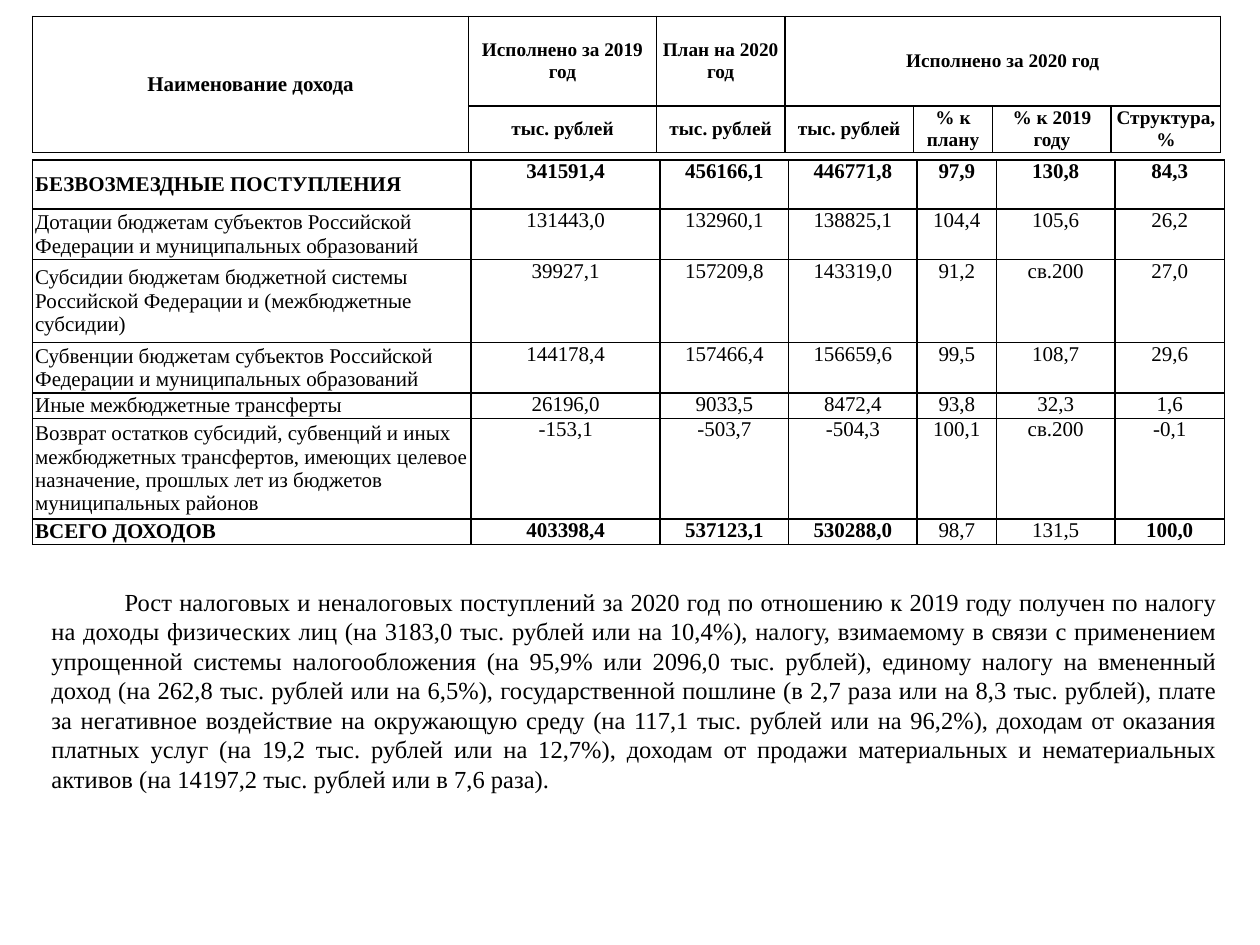
from lxml.etree import SubElement
from pptx import Presentation
from pptx.dml.color import RGBColor
from pptx.enum.text import MSO_ANCHOR as ANCHOR, PP_ALIGN as ALIGN
from pptx.oxml import parse_xml
from pptx.oxml.ns import nsdecls
from pptx.util import Inches, Pt

COLORS = {"text": "000000", "border": "000000"}
FONT = "Times New Roman"

HEADER_WIDTHS = [3.46, 1.49, 1.02, 1.02, 0.63, 0.94, 0.87]
HEADER_HEIGHTS = [0.71, 0.37]
HEADER_ROWS = [
    ["Наименование дохода", "Исполнено за 2019 год", "План на 2020 год",
     "Исполнено за 2020 год", "", "", ""],
    ["", "тыс. рублей", "тыс. рублей", "тыс. рублей",
     "% к плану", "% к 2019 году", "Структура, %"],
]

INCOME_WIDTHS = [3.48, 1.5, 1.02, 1.02, 0.63, 0.94, 0.87]
INCOME_HEIGHTS = [0.39, 0.4, 0.66, 0.4, 0.2, 0.8, 0.2]
INCOME_ROWS = [
    ["БЕЗВОЗМЕЗДНЫЕ ПОСТУПЛЕНИЯ",
     "341591,4", "456166,1", "446771,8", "97,9", "130,8", "84,3"],
    ["Дотации бюджетам субъектов Российской Федерации и муниципальных образований",
     "131443,0", "132960,1", "138825,1", "104,4", "105,6", "26,2"],
    ["Субсидии бюджетам бюджетной системы Российской Федерации и (межбюджетные субсидии)",
     "39927,1", "157209,8", "143319,0", "91,2", "св.200", "27,0"],
    ["Субвенции бюджетам субъектов Российской Федерации и муниципальных образований",
     "144178,4", "157466,4", "156659,6", "99,5", "108,7", "29,6"],
    ["Иные межбюджетные трансферты",
     "26196,0", "9033,5", "8472,4", "93,8", "32,3", "1,6"],
    ["Возврат остатков субсидий, субвенций и иных межбюджетных трансфертов, "
     "имеющих целевое назначение, прошлых лет из бюджетов муниципальных районов",
     "-153,1", "-503,7", "-504,3", "100,1", "св.200", "-0,1"],
    ["ВСЕГО ДОХОДОВ",
     "403398,4", "537123,1", "530288,0", "98,7", "131,5", "100,0"],
]

GROWTH_TEXT = (
    "Рост налоговых и неналоговых поступлений за 2020 год по отношению к 2019 году "
    "получен по налогу на доходы физических лиц (на 3183,0 тыс. рублей или на 10,4%), "
    "налогу, взимаемому в связи с применением упрощенной системы налогообложения "
    "(на 95,9% или 2096,0 тыс. рублей), единому налогу на вмененный доход "
    "(на 262,8 тыс. рублей или на 6,5%), государственной пошлине "
    "(в 2,7 раза или на 8,3 тыс. рублей), плате за негативное воздействие на окружающую "
    "среду (на 117,1 тыс. рублей или на 96,2%), доходам от оказания платных услуг "
    "(на 19,2 тыс. рублей или на 12,7%), доходам от продажи материальных и "
    "нематериальных активов (на 14197,2 тыс. рублей или в 7,6 раза)."
)


def write(tf, text, size=12, bold=False, align=ALIGN.LEFT, indent=0):
    tf.word_wrap = True
    p = tf.paragraphs[0]
    p.alignment = align
    if indent:
        p._p.get_or_add_pPr().set("indent", str(Inches(indent)))
    r = p.add_run()
    r.text = text
    r.font.name = FONT
    r.font.size = Pt(size)
    r.font.bold = bold
    r.font.color.rgb = RGBColor.from_string(COLORS["text"])


def style_cell(cell, side_margin, anchor):
    """Set margins, anchor, empty fill and a 1 pt border on all four sides."""
    cell.margin_left = cell.margin_right = Inches(side_margin)
    cell.margin_top = cell.margin_bottom = 0
    cell.vertical_anchor = anchor
    cell.fill.background()
    tc_pr = cell._tc.get_or_add_tcPr()
    for i, side in enumerate(("lnL", "lnR", "lnT", "lnB")):
        ln = parse_xml(
            f'<a:{side} {nsdecls("a")} w="{Pt(1)}"><a:solidFill>'
            f'<a:srgbClr val="{COLORS["border"]}"/></a:solidFill></a:{side}>')
        tc_pr.insert(i, ln)


def add_grid(slide, left, top, widths, heights):
    """Add an unstyled table with the given column widths and row heights."""
    table = slide.shapes.add_table(
        len(heights), len(widths), Inches(left), Inches(top),
        Inches(sum(widths)), Inches(sum(heights))).table
    table.first_row = table.horz_banding = False
    for column, width in zip(table.columns, widths):
        column.width = Inches(width)
    for row, height in zip(table.rows, heights):
        row.height = Inches(height)
    return table


def add_income_table(slide, left, top):
    table = add_grid(slide, left, top, INCOME_WIDTHS, INCOME_HEIGHTS)
    total = len(INCOME_ROWS) - 1
    for i, row in enumerate(INCOME_ROWS):
        for j, text in enumerate(row):
            cell = table.cell(i, j)
            is_name = j == 0
            bold = i == 0 or (i == total and j not in (4, 5))
            style_cell(cell, 0.02 if is_name else 0.07,
                       ANCHOR.MIDDLE if is_name else ANCHOR.TOP)
            write(cell.text_frame, text, bold=bold,
                  align=ALIGN.LEFT if is_name else ALIGN.CENTER)


def add_header_table(slide, left, top):
    table = add_grid(slide, left, top, HEADER_WIDTHS, HEADER_HEIGHTS)
    for i, row in enumerate(HEADER_ROWS):
        for j, text in enumerate(row):
            cell = table.cell(i, j)
            style_cell(cell, 0.02, ANCHOR.MIDDLE)
            if text:
                write(cell.text_frame, text, size=11 if j else 12,
                      bold=True, align=ALIGN.CENTER)
    table.cell(0, 0).merge(table.cell(1, 0))
    table.cell(0, 3).merge(table.cell(0, 6))


def add_growth_text(slide, left, top, width, height):
    box = slide.shapes.add_textbox(
        Inches(left), Inches(top), Inches(width), Inches(height))
    write(box.text_frame, GROWTH_TEXT, size=14, align=ALIGN.JUSTIFY, indent=0.58)


def main():
    prs = Presentation()
    prs.slide_width, prs.slide_height = Inches(10), Inches(7.5)
    slide = prs.slides.add_slide(prs.slide_layouts[6])
    add_income_table(slide, 0.26, 1.27)
    add_header_table(slide, 0.26, 0.13)
    add_growth_text(slide, 0.31, 4.61, 9.45, 1.75)
    prs.save("out.pptx")


if __name__ == "__main__":
    main()
